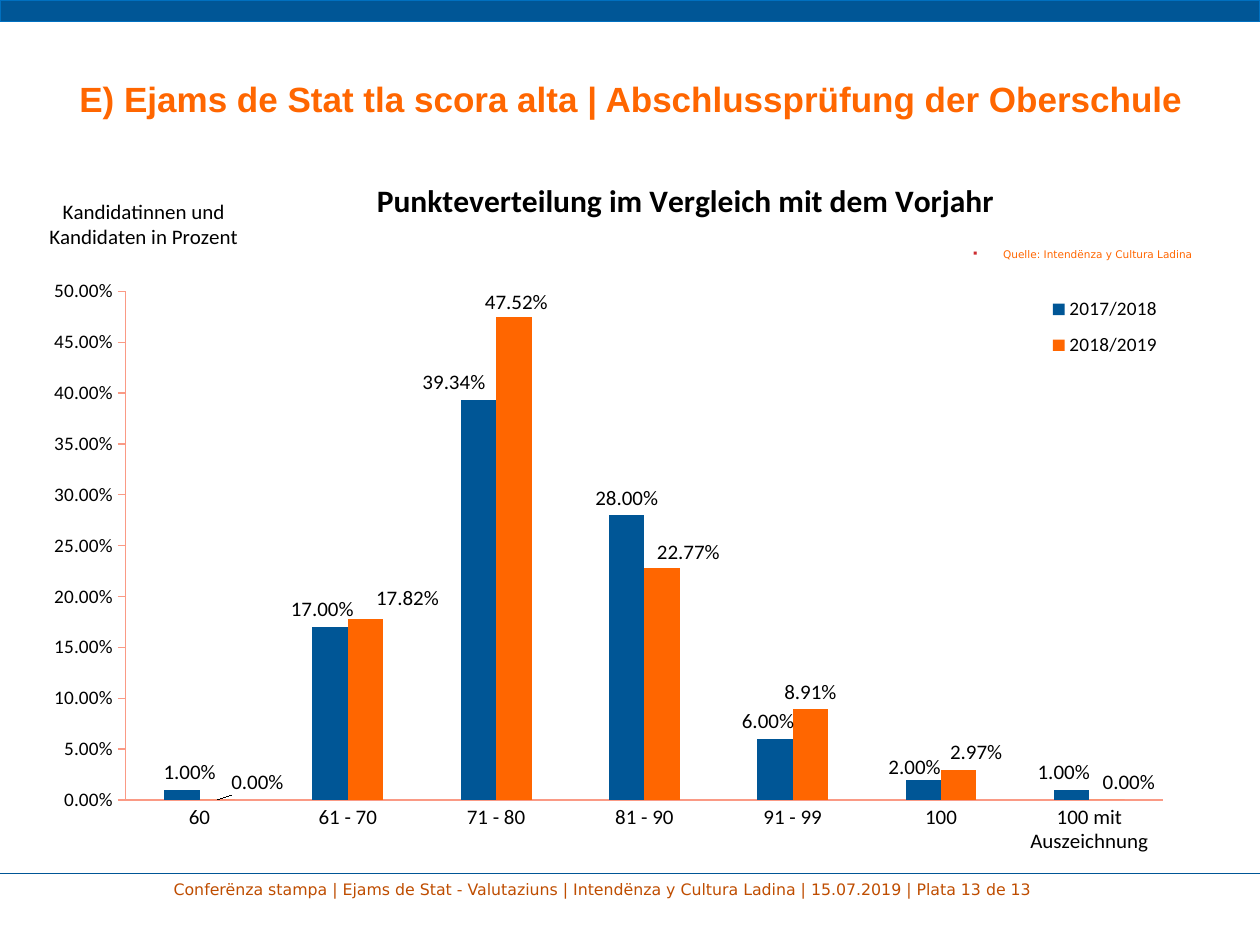
"""Build the slide that compares exam score distributions over two school years."""
from lxml.etree import SubElement
from pptx import Presentation
from pptx.chart.data import CategoryChartData
from pptx.dml.color import RGBColor
from pptx.enum.chart import XL_CHART_TYPE as ChartType, XL_LABEL_POSITION as LabelPosition
from pptx.enum.chart import XL_LEGEND_POSITION as LegendPosition, XL_TICK_MARK as TickMark
from pptx.enum.shapes import MSO_CONNECTOR as Connector, MSO_SHAPE as Shape
from pptx.enum.text import MSO_ANCHOR as Anchor, PP_ALIGN as Align
from pptx.oxml.ns import qn
from pptx.util import Pt

BLUE = RGBColor(0x00, 0x56, 0x96)
EDGE_BLUE = RGBColor(0x00, 0x70, 0xC0)
ORANGE = RGBColor(0xFF, 0x66, 0x00)
BROWN = RGBColor(0xBF, 0x4D, 0x00)
RED = RGBColor(0xCC, 0x2C, 0x30)
SALMON = RGBColor(0xFA, 0x9A, 0x85)
BLACK = RGBColor(0x00, 0x00, 0x00)

CATEGORIES = ["60", "61 - 70", "71 - 80", "81 - 90", "91 - 99", "100", "100 mit Auszeichnung"]
SERIES = [
    ("2017/2018", BLUE, [0.01, 0.17, 0.3934, 0.28, 0.06, 0.02, 0.01]),
    ("2018/2019", ORANGE, [0, 0.1782, 0.4752, 0.2277, 0.0891, 0.0297, 0]),
]
LABEL_SHIFTS = [
    {0: (4.5, 0), 1: (-4.5, 0), 2: (-14, 0), 4: (-4, 0), 5: (-5, 3), 6: (-4.5, 0)},
    {0: (23, 0), 1: (24, -2), 2: (1.5, 1.5), 3: (15, 0.5), 5: (10, 0), 6: (12.5, 0)},
]
CHART_BOX = (14.4, 82.8, 681.84, 405.36)


def set_font(font, size, color=BLACK, name="Calibri", bold=False):
    """Apply the given character format to a font."""
    font.size, font.name, font.bold = Pt(size), name, bold
    font.color.rgb = color


def write_text(frame, text, align=Align.LEFT, **style):
    """Put one formatted paragraph per line into a text frame."""
    frame.text = text
    for paragraph in frame.paragraphs:
        paragraph.alignment = align
        for run in paragraph.runs:
            set_font(run.font, **style)


def place(element, index, **values):
    """Give a chart part a manual layout in fractions of the chart."""
    for old in element.findall(qn("c:layout")):
        element.remove(old)
    layout = SubElement(element, qn("c:layout"))
    manual = SubElement(layout, qn("c:manualLayout"))
    for tag, value in values.items():
        SubElement(manual, qn(f"c:{tag}")).set("val", str(value))
    element.insert(index, layout)


class SlideBuilder:
    """Hold the style and the current slide."""

    line_width = Pt(0.75)

    def __init__(self, presentation):
        """Add a title-only slide."""
        self.slide = presentation.slides.add_slide(presentation.slide_layouts[5])
        self.shapes = self.slide.shapes

    def title(self, text, box, **style):
        """Move and fill the title placeholder."""
        shape = self.shapes.title
        shape.left, shape.top, shape.width, shape.height = map(Pt, box)
        shape.text_frame.vertical_anchor = Anchor.MIDDLE
        write_text(shape.text_frame, text, Align.CENTER, **style)

    def bar(self, box, fill, edge):
        """Add a plain filled rectangle."""
        shape = self.shapes.add_shape(Shape.RECTANGLE, *map(Pt, box))
        shape.shadow.inherit = False
        shape.fill.solid()
        shape.fill.fore_color.rgb = fill
        shape.line.color.rgb = edge
        shape.line.width = self.line_width

    def rule(self, ends, color):
        """Add a straight line without a shadow."""
        line = self.shapes.add_connector(Connector.STRAIGHT, *map(Pt, ends))
        line.line.color.rgb = color
        line.line.width = self.line_width
        SubElement(line._element.spPr, qn("a:effectLst"))

    def text(self, text, box, **style):
        """Add a wrapping text box and return its frame."""
        frame = self.shapes.add_textbox(*map(Pt, box)).text_frame
        frame.word_wrap = True
        write_text(frame, text, **style)
        return frame

    def source_note(self, text, box, **style):
        """Add a tight, bulleted source line."""
        frame = self.text(text, box, align=Align.RIGHT, **style)
        frame.margin_left = frame.margin_bottom = 0
        frame.margin_top, frame.margin_right = Pt(1.44), Pt(2.16)
        paragraph = frame.paragraphs[0]
        paragraph.line_spacing = 1.1
        properties = paragraph._p.get_or_add_pPr()
        before = SubElement(properties, qn("a:spcBef"))
        SubElement(before, qn("a:spcPct")).set("val", "20000")
        color = SubElement(properties, qn("a:buClr"))
        SubElement(color, qn("a:srgbClr")).set("val", str(RED))
        SubElement(properties, qn("a:buSzPct")).set("val", "50000")
        SubElement(properties, qn("a:buChar")).set("char", "■")

    def chart(self, box):
        """Add the clustered column chart."""
        data = CategoryChartData(number_format="0.00%")
        data.categories = CATEGORIES
        for name, _, values in SERIES:
            data.add_series(name, values)
        chart = self.shapes.add_chart(ChartType.COLUMN_CLUSTERED, *map(Pt, box), data).chart
        set_font(chart.font, 10)
        plot = chart.plots[0]
        plot.gap_width, plot.overlap, plot.vary_by_categories = 219, 0, False
        place(chart._chartSpace.chart.plotArea, 0, layoutTarget="inner", xMode="edge",
              yMode="edge", x=0.084, y=0.209, w=0.87, h=0.725)
        self.chart_title(chart, "Punkteverteilung im Vergleich mit dem Vorjahr",
                         0.29, 0.04, size=18, bold=True)
        self.chart_title(chart.value_axis, "Kandidatinnen und\nKandidaten in Prozent",
                         0.017, 0.07, size=12)
        self.axis(chart.category_axis, 12, TickMark.NONE)
        self.axis(chart.value_axis, 11, TickMark.OUTSIDE)
        chart.value_axis.minimum_scale, chart.value_axis.maximum_scale = 0, 0.5
        chart.value_axis.major_unit = 0.05
        chart.value_axis.tick_labels.number_format = "0.00%"
        chart.value_axis.tick_labels.number_format_is_linked = False
        chart.has_legend = True
        chart.legend.position = LegendPosition.BOTTOM
        chart.legend.include_in_layout = False
        set_font(chart.legend.font, 11)
        place(chart.legend._element, 1, xMode="edge", yMode="edge", x=0.85, y=0.2, w=0.11, h=0.12)
        for series, (_, color, _), shifts in zip(plot.series, SERIES, LABEL_SHIFTS):
            series.format.fill.solid()
            series.format.fill.fore_color.rgb = color
            series.invert_if_negative = False
            self.labels(series, shifts, box)

    def chart_title(self, owner, text, x, y, **style):
        """Title a chart or an axis horizontally at a fixed place."""
        owner.has_title = True
        title = owner.chart_title if hasattr(owner, "chart_title") else owner.axis_title
        write_text(title.text_frame, text, Align.CENTER, **style)
        body = title._element.find(".//" + qn("a:bodyPr"))
        body.set("rot", "0")
        body.set("vert", "horz")
        place(title._element, 1, xMode="edge", yMode="edge", x=x, y=y)

    def axis(self, axis, size, tick):
        """Format an axis without gridlines."""
        axis.has_major_gridlines = False
        axis.major_tick_mark, axis.minor_tick_mark = tick, TickMark.NONE
        axis.format.line.color.rgb = SALMON
        axis.format.line.width = self.line_width
        set_font(axis.tick_labels.font, size)

    def labels(self, series, shifts, box):
        """Show values above the columns, some of them moved aside."""
        labels = series.data_labels
        labels.show_value = True
        labels.number_format, labels.number_format_is_linked = "0.00%", False
        labels.position = LabelPosition.OUTSIDE_END
        set_font(labels.font, 12)
        for index in shifts:
            label = series.points[index].data_label
            set_font(label.font, 12)
            label.position = LabelPosition.OUTSIDE_END
        for element, (x, y) in zip(labels._element.findall(qn("c:dLbl")), shifts.values()):
            place(element, 1, x=round(x / box[2], 4), y=round(y / box[3], 4))


def main():
    """Create and save the presentation."""
    presentation = Presentation()
    presentation.slide_width, presentation.slide_height = Pt(720), Pt(540)
    builder = SlideBuilder(presentation)
    builder.rule((0, 499, 720, 499), BLUE)
    builder.text("Conferënza stampa | Ejams de Stat - Valutaziuns | Intendënza y Cultura Ladina"
                 " | 15.07.2019 | Plata 13 de 13", (92.16, 499, 535.68, 19.44),
                 size=9, color=BROWN, name="DejaVu Sans")
    builder.bar((0, 0, 720, 12.24), BLUE, EDGE_BLUE)
    builder.chart(CHART_BOX)
    builder.title("E) Ejams de Stat tla scora alta | Abschlussprüfung der Oberschule",
                  (36.72, 11.52, 648, 90), size=20, color=ORANGE, name="Arial", bold=True)
    builder.source_note("Quelle: Intendënza y Cultura Ladina", (529.2, 139.68, 154.08, 3.6),
                        size=6, color=ORANGE, name="DejaVu Sans")
    presentation.save("out.pptx")


if __name__ == "__main__":
    main()
